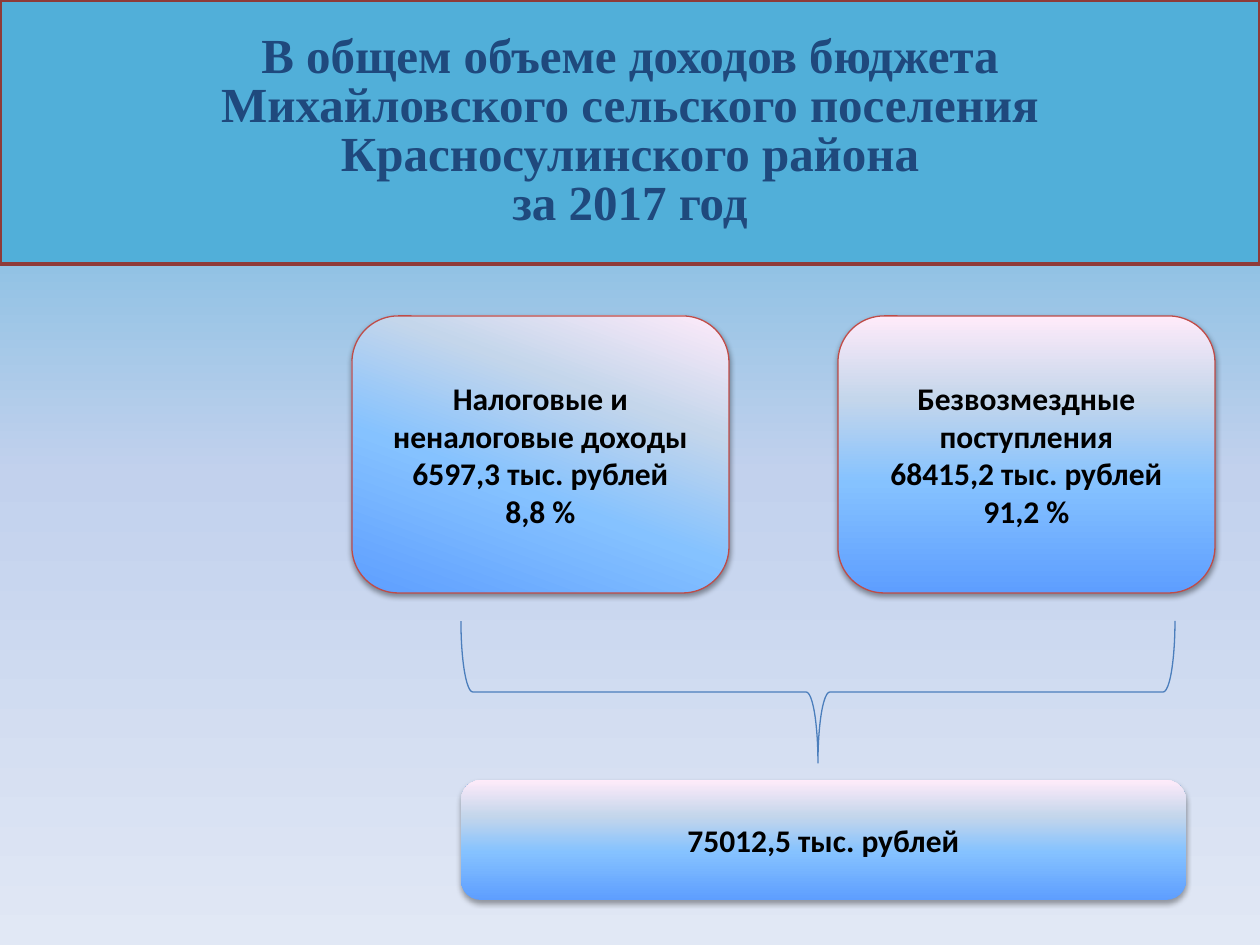
from dataclasses import dataclass
from typing import Optional

from lxml.etree import SubElement
from pptx import Presentation
from pptx.dml.color import RGBColor
from pptx.enum.shapes import MSO_SHAPE
from pptx.enum.text import MSO_ANCHOR, MSO_AUTO_SIZE, PP_ALIGN
from pptx.oxml.ns import qn
from pptx.util import Emu, Pt

PIXELS_PER_INCH = 126
EMU_PER_INCH = 914400

SKY = RGBColor(0x51, 0xAF, 0xD9)
MIST = RGBColor(0xC2, 0xD1, 0xED)
PALE = RGBColor(0xE1, 0xE8, 0xF5)
NAVY = RGBColor(0x1F, 0x49, 0x7D)
MAROON = RGBColor(0x8E, 0x3B, 0x39)
RED = RGBColor(0xBF, 0x4C, 0x48)
BLUE = RGBColor(0x4B, 0x7E, 0xBC)
BLACK = RGBColor(0x00, 0x00, 0x00)

BACKGROUND_STOPS = [(0, SKY), (50, MIST), (100, PALE)]
CARD_STOPS = [
    (0, RGBColor(0x5E, 0x9E, 0xFF)),
    (40, RGBColor(0x85, 0xC2, 0xFF)),
    (70, RGBColor(0xC4, 0xD6, 0xEB)),
    (100, RGBColor(0xFF, 0xEB, 0xFA)),
]

TITLE = (
    "В общем объеме доходов бюджета\n"
    "Михайловского сельского поселения Красносулинского района\n"
    "за 2017 год"
)


@dataclass(frozen=True)
class Box:
    left: int
    top: int
    width: int
    height: int

    def emu(self) -> list[Emu]:
        return [px(n) for n in (self.left, self.top, self.width, self.height)]


@dataclass(frozen=True)
class Card:
    box: Box
    text: str
    angle: int = 270
    border: Optional[RGBColor] = RED
    shadow_opacity: int = 38
    shadow_distance: float = 1.6


CARDS = [
    Card(
        Box(838, 316, 377, 277),
        "Безвозмездные\nпоступления\n68415,2 тыс. рублей\n91,2 %",
    ),
    Card(
        Box(352, 316, 377, 277),
        "Налоговые и\nненалоговые доходы\n6597,3 тыс. рублей\n8,8 %",
        angle=290,
    ),
    Card(
        Box(461, 780, 725, 120),
        "75012,5 тыс. рублей",
        border=None,
        shadow_opacity=35,
        shadow_distance=1.8,
    ),
]


def px(count: int) -> Emu:
    return Emu(round(count * EMU_PER_INCH / PIXELS_PER_INCH))


def set_gradient(fill, owner, stops: list[tuple[int, RGBColor]], angle: int) -> None:
    fill.gradient()
    gradient = next(owner.iter(qn("a:gradFill")))
    stop_list = gradient.find(qn("a:gsLst"))
    for stop in list(stop_list):
        stop_list.remove(stop)
    for percent, color in stops:
        stop = SubElement(stop_list, qn("a:gs"), pos=str(percent * 1000))
        SubElement(stop, qn("a:srgbClr"), val=str(color))
    gradient.find(qn("a:lin")).set("ang", str(angle * 60000))


def add_shadow(shape, opacity: int, distance: float) -> None:
    effects = next(shape.element.iter(qn("a:effectLst")))
    shadow = SubElement(
        effects,
        qn("a:outerShdw"),
        blurRad=str(Pt(3.1)),
        dist=str(Pt(distance)),
        dir=str(90 * 60000),
        rotWithShape="0",
    )
    color = SubElement(shadow, qn("a:srgbClr"), val=str(BLACK))
    SubElement(color, qn("a:alpha"), val=str(opacity * 1000))


def format_text(text_frame, font_name: str, size: int, color: RGBColor) -> None:
    text_frame.word_wrap = True
    text_frame.auto_size = MSO_AUTO_SIZE.NONE
    text_frame.vertical_anchor = MSO_ANCHOR.MIDDLE
    for paragraph in text_frame.paragraphs:
        paragraph.alignment = PP_ALIGN.CENTER
        for run in paragraph.runs:
            run.font.name = font_name
            run.font.size = Pt(size)
            run.font.bold = True
            run.font.color.rgb = color


def set_line(shape, color: Optional[RGBColor], width: float) -> None:
    if color is None:
        shape.line.fill.background()
        return
    shape.line.color.rgb = color
    shape.line.width = Pt(width)


def format_title(title) -> None:
    title.left, title.top, title.width, title.height = Box(0, 0, 1260, 264).emu()
    title.fill.solid()
    title.fill.fore_color.rgb = SKY
    set_line(title, MAROON, 2)
    paragraph = title.text_frame.paragraphs[0]
    paragraph.text = TITLE
    paragraph.line_spacing = Pt(28)
    format_text(title.text_frame, "Times New Roman", 28, NAVY)


def add_brace(slide, box: Box) -> None:
    brace = slide.shapes.add_shape(MSO_SHAPE.LEFT_BRACE, *box.emu())
    brace.rotation = 270
    brace.shadow.inherit = False
    brace.fill.background()
    set_line(brace, BLUE, 0.75)


def add_card(slide, card: Card) -> None:
    shape = slide.shapes.add_shape(MSO_SHAPE.ROUNDED_RECTANGLE, *card.box.emu())
    set_gradient(shape.fill, shape.element, CARD_STOPS, card.angle)
    set_line(shape, card.border, 0.75)
    shape.shadow.inherit = False
    add_shadow(shape, card.shadow_opacity, card.shadow_distance)
    shape.text_frame.text = card.text
    format_text(shape.text_frame, "Calibri", 18, BLACK)


def main() -> None:
    presentation = Presentation()
    presentation.slide_width, presentation.slide_height = px(1260), px(945)
    slide = presentation.slides.add_slide(presentation.slide_layouts[5])
    set_gradient(slide.background.fill, slide.element, BACKGROUND_STOPS, 90)
    format_title(slide.shapes.title)
    add_brace(slide, Box(747, 335, 142, 714))
    for card in CARDS:
        add_card(slide, card)
    presentation.save("out.pptx")


if __name__ == "__main__":
    main()
